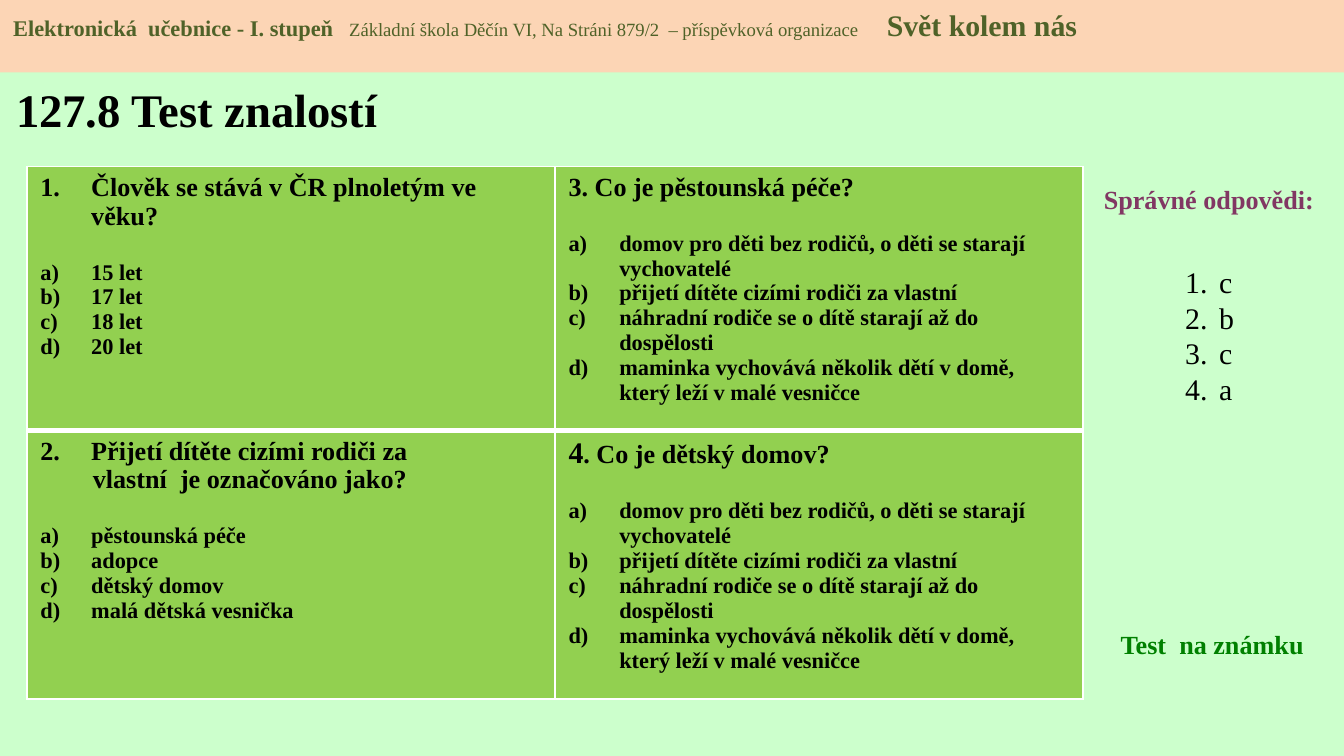
from dataclasses import dataclass
from typing import Optional

from lxml import etree
from pptx import Presentation
from pptx import util as u
from pptx.dml.color import RGBColor
from pptx.enum import shapes, text
from pptx.oxml.ns import qn

FONT = "Times New Roman"
COLORS = {
    "page": "CCFFCC", "banner": "FCD5B5", "banner_text": "4F6228",
    "cell": "92D050", "border": "FFFFFF", "black": "000000",
    "plum": "813763", "green": "008000",
}
HANG = u.Cm(0.96)


@dataclass
class Run:
    text: str
    size: float
    bold: bool = True
    color: str = "black"


@dataclass
class Para:
    runs: list[Run]
    left: int = 0
    hang: int = 0
    bullet: Optional[str] = None
    start: int = 1
    tabs: tuple = ()
    format: Optional[dict] = None


@dataclass
class Box:
    left: float
    top: float
    width: float
    height: float
    paras: list[Para]
    format: dict


@dataclass
class Question:
    title: list[Para]
    options: list[str]


def rgb(name: str) -> RGBColor:
    return RGBColor.from_string(COLORS[name])


def apply(obj, values: Optional[dict]) -> None:
    for name, value in (values or {}).items():
        setattr(obj, name, value)


def paint(fill, color: str) -> None:
    fill.solid()
    fill.fore_color.rgb = rgb(color)


def write(tf, paras: list[Para]) -> None:
    for i, para in enumerate(paras):
        p = tf.paragraphs[0] if i == 0 else tf.add_paragraph()
        ppr = p._p.get_or_add_pPr()
        ppr.set("marL", str(para.left))
        ppr.set("indent", str(-para.hang))
        apply(p, {"alignment": text.PP_ALIGN.LEFT, **(para.format or {})})
        if para.bullet:
            etree.SubElement(ppr, qn("a:buFont"), typeface=FONT)
            etree.SubElement(ppr, qn("a:buAutoNum"), type=para.bullet, startAt=str(para.start))
        if para.tabs:
            tabs = etree.SubElement(ppr, qn("a:tabLst"))
            for pos, align in para.tabs:
                etree.SubElement(tabs, qn("a:tab"), pos=str(u.Cm(pos)), algn=align)
        for run in para.runs:
            r = p.add_run()
            r.text = run.text
            apply(r.font, {"name": FONT, "size": u.Pt(run.size), "bold": run.bold})
            r.font.color.rgb = rgb(run.color)


def add_box(s, box: Box) -> None:
    sp = s.shapes.add_textbox(*map(u.Cm, (box.left, box.top, box.width, box.height)))
    apply(sp.text_frame, box.format)
    write(sp.text_frame, box.paras)


def set_borders(cell, widths: dict[str, float]) -> None:
    tcpr = cell._tc.get_or_add_tcPr()
    for i, (side, width) in enumerate(widths.items()):
        ln = etree.Element(qn(f"a:ln{side}"), w=str(u.Pt(width)))
        fill = etree.SubElement(ln, qn("a:solidFill"))
        etree.SubElement(fill, qn("a:srgbClr"), val=COLORS["border"])
        tcpr.insert(i, ln)


def question_paras(q: Question) -> list[Para]:
    options = [
        Para([Run(option, 12)], HANG, HANG, "alphaLcParenR",
             format={"space_before": u.Pt(0 if i else 15.5)})
        for i, option in enumerate(q.options)
    ]
    return q.title + options


def add_questions(s, rows: list[list[Question]]) -> None:
    frame = s.shapes.add_table(2, 2, *map(u.Cm, (0.51, 3.15, 19.96, 10.06)))
    table = frame.table
    for column in table.columns:
        column.width = u.Cm(9.98)
    for row, height in zip(table.rows, (4.98, 5.08)):
        row.height = u.Cm(height)
    for i, row in enumerate(rows):
        for j, q in enumerate(row):
            cell = table.cell(i, j)
            paint(cell.fill, "cell")
            set_borders(cell, {"L": 1, "R": 1, "T": 3 if i else 1, "B": 1 if i else 3})
            write(cell.text_frame, question_paras(q))


def heading(*runs: Run, **numbering) -> Para:
    return Para(list(runs), HANG, HANG, **numbering)


CARE_OPTIONS = [
    "domov pro děti bez rodičů, o děti se starají vychovatelé",
    "přijetí dítěte cizími rodiči za vlastní",
    "náhradní rodiče se o dítě starají až do dospělosti",
    "maminka vychovává několik dětí v domě, který leží v malé vesničce",
]
QUESTIONS = [
    [
        Question([heading(Run("Člověk se stává v ČR plnoletým ve věku?", 14), bullet="arabicPeriod")],
                 [f"{age} let" for age in (15, 17, 18, 20)]),
        Question([heading(Run("3. Co je pěstounská péče?", 14))], CARE_OPTIONS),
    ],
    [
        Question([heading(Run("Přijetí dítěte cizími rodiči za", 14), bullet="arabicPeriod", start=2),
                  Para([Run("vlastní  je označováno jako?", 14)], u.Cm(0.99))],
                 ["pěstounská péče", "adopce", "dětský domov", "malá dětská vesnička"]),
        Question([heading(Run("4", 16), Run(". Co je dětský domov?", 14))], CARE_OPTIONS),
    ],
]
ANSWERS = [
    Para([Run(letter, 16, False)], u.Cm(0.64), u.Cm(0.64), "arabicPeriod",
         format={"line_spacing": u.Pt(19)})
    for letter in "cbca"
]
BOXES = [
    Box(20.45, 3.35, 4.8, 0.86,
        [Para([Run("Správné odpovědi:", 14, color="plum")],
              format={"alignment": text.PP_ALIGN.CENTER})],
        {"word_wrap": False}),
    Box(22.15, 4.19, 1.4, 5.05, ANSWERS, {"word_wrap": True, "margin_top": u.Cm(0.81)}),
    Box(20.93, 11.76, 3.99, 0.86, [Para([Run("Test  na známku", 14, color="green")])],
        {"word_wrap": False}),
]
BANNER = Para([
    Run("Elektronická  učebnice - I. stupeň\t", 12, color="banner_text"),
    Run("Základní škola Děčín VI, Na Stráni 879/2  – příspěvková organizace\t", 10, False, "banner_text"),
    Run("Svět kolem nás", 16, color="banner_text"),
], tabs=((8.38, "l"), (24.78, "r")))


def add_title(s) -> None:
    sp = s.shapes.title
    apply(sp, dict(zip(("left", "top", "width", "height"), map(u.Cm, (0.05, 1.4, 7.42, 1.32)))))
    apply(sp.text_frame, {"word_wrap": False, "vertical_anchor": text.MSO_ANCHOR.MIDDLE,
                          "auto_size": text.MSO_AUTO_SIZE.NONE})
    write(sp.text_frame, [Para([Run("127.8 Test znalostí", 25)])])


def add_banner(s) -> None:
    sp = s.shapes.add_shape(shapes.MSO_SHAPE.RECTANGLE, 0, 0, u.Cm(25.4), u.Cm(1.37))
    sp.shadow.inherit = False
    paint(sp.fill, "banner")
    sp.line.fill.background()
    apply(sp.text_frame, {"word_wrap": True, "vertical_anchor": text.MSO_ANCHOR.TOP})
    write(sp.text_frame, [BANNER])


def main() -> None:
    prs = Presentation()
    apply(prs, {"slide_width": u.Cm(25.4), "slide_height": u.Cm(14.29)})
    s = prs.slides.add_slide(prs.slide_layouts[5])
    paint(s.background.fill, "page")
    add_title(s)
    add_questions(s, QUESTIONS)
    for box in BOXES:
        add_box(s, box)
    add_banner(s)
    prs.save("out.pptx")


if __name__ == "__main__":
    main()
